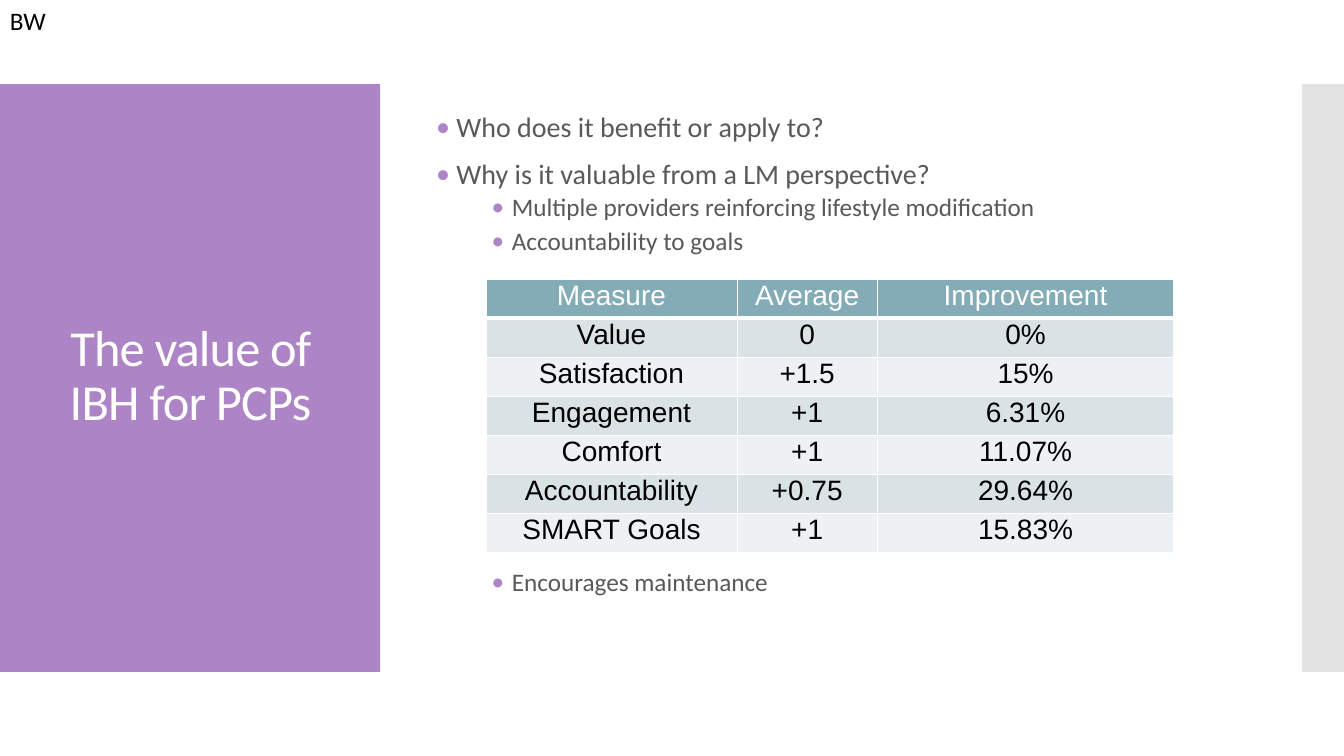
from lxml import etree
from pptx import Presentation
from pptx.dml.color import RGBColor
from pptx.enum.shapes import MSO_SHAPE
from pptx.enum.text import MSO_ANCHOR, PP_ALIGN
from pptx.oxml.ns import qn
from pptx.util import Inches, Pt

RECTANGLE = MSO_SHAPE.RECTANGLE
TOP, MIDDLE = MSO_ANCHOR.TOP, MSO_ANCHOR.MIDDLE
LEFT, CENTER = PP_ALIGN.LEFT, PP_ALIGN.CENTER

COLORS = {
    "accent": "AD84C6",
    "side": "C8C8C8",
    "white": "FFFFFF",
    "black": "000000",
    "body": "595959",
    "header": "84ACB6",
    "odd_row": "D9E3E5",
    "even_row": "EDF1F3",
}
COLUMNS, ROWS = 32, 18
MEASURES = [
    ("Measure", "Average", "Improvement"),
    ("Value", "0", "0%"),
    ("Satisfaction", "+1.5", "15%"),
    ("Engagement", "+1", "6.31%"),
    ("Comfort", "+1", "11.07%"),
    ("Accountability", "+0.75", "29.64%"),
    ("SMART Goals", "+1", "15.83%"),
]
# text, level, space before in points
POINTS = [
    ("Who does it benefit or apply to?", 0, 0),
    ("Why is it valuable from a LM perspective?", 0, 12),
    ("Multiple providers reinforcing lifestyle modification", 1, 2.5),
    ("Accountability to goals", 1, 2.5),
    ("Encourages maintenance", 1, 222),  # leaves room for the table
]


def color(name):
    return RGBColor.from_string(COLORS[name])


def add_color(parent, name):
    etree.SubElement(parent, qn("a:srgbClr"), val=COLORS[name])


class SlideBuilder:
    """Places elements on a slide by grid columns and rows."""

    def __init__(self, presentation):
        self.slide = presentation.slides.add_slide(presentation.slide_layouts[6])
        self.column = presentation.slide_width / COLUMNS
        self.row = presentation.slide_height / ROWS

    def place(self, left, top, width, height):
        return (round(left * self.column), round(top * self.row),
                round(width * self.column), round(height * self.row))

    def style(self, paragraph, size, color_name, font="Calibri", align=LEFT):
        paragraph.alignment = align
        paragraph.font.size = Pt(size)
        paragraph.font.name = font
        paragraph.font.color.rgb = color(color_name)

    def block(self, position, fill, opacity=100):
        shape = self.slide.shapes.add_shape(RECTANGLE, *self.place(*position))
        shape.shadow.inherit = False
        shape.fill.solid()
        shape.fill.fore_color.rgb = color(fill)
        shape.line.fill.background()
        if opacity < 100:
            fill_color = shape.fill._xPr.find(".//" + qn("a:srgbClr"))
            etree.SubElement(fill_color, qn("a:alpha"), val=str(opacity * 1000))

    def text_frame(self, position, anchor=TOP):
        frame = self.slide.shapes.add_textbox(*self.place(*position)).text_frame
        frame.word_wrap = True
        frame.vertical_anchor = anchor
        return frame

    def label(self, position, text, size, color_name):
        paragraph = self.text_frame(position).paragraphs[0]
        paragraph.text = text
        self.style(paragraph, size, color_name)

    def title(self, position, text):
        paragraph = self.text_frame(position, MIDDLE).paragraphs[0]
        paragraph.text = text
        paragraph.line_spacing = 0.9
        self.style(paragraph, 36, "white", align=CENTER)
        paragraph.font._rPr.set("spc", "-60")

    def bullets(self, position, points):
        frame = self.text_frame(position)
        for index, (text, level, space_before) in enumerate(points):
            paragraph = frame.add_paragraph() if index else frame.paragraphs[0]
            paragraph.text = text
            paragraph.level = level
            paragraph.line_spacing = 0.9
            paragraph.space_before = Pt(space_before)
            paragraph.space_after = Pt(2.5 * level)
            properties = paragraph._p.get_or_add_pPr()
            properties.set("marL", str(Inches((0.2, 0.75)[level])))
            properties.set("indent", str(Inches(-0.2)))
            add_color(etree.SubElement(properties, qn("a:buClr")), "accent")
            etree.SubElement(properties, qn("a:buFont"), typeface="Calibri")
            etree.SubElement(properties, qn("a:buChar"), char="•")
            self.style(paragraph, 20 - 2 * level, "body")

    def border(self, cell, edge, width):
        line = etree.SubElement(cell._tc.get_or_add_tcPr(), qn("a:ln" + edge),
                                w=str(Pt(width)))
        add_color(etree.SubElement(line, qn("a:solidFill")), "white")

    def cell(self, cell, text, row_index):
        is_header = row_index == 0
        cell.margin_left = cell.margin_right = Inches(0.02)
        cell.margin_top = cell.margin_bottom = Inches(0.01)
        for edge in "LRTB":
            # the thick header rule also forms the top of the first data row
            thick = (row_index, edge) in ((0, "B"), (1, "T"))
            self.border(cell, edge, 3 if thick else 1)
        fill = "header" if is_header else ("even_row", "odd_row")[row_index % 2]
        cell.fill.solid()
        cell.fill.fore_color.rgb = color(fill)
        paragraph = cell.text_frame.paragraphs[0]
        paragraph.text = text
        self.style(paragraph, 20, "white" if is_header else "black", "Arial", CENTER)

    def table(self, left, top, widths, row_height, rows):
        position = self.place(left, top, sum(widths), row_height * len(rows))
        table = self.slide.shapes.add_table(len(rows), len(widths), *position).table
        table.horz_banding = False
        for column, width in zip(table.columns, widths):
            column.width = round(width * self.column)
        for row_index, values in enumerate(rows):
            table.rows[row_index].height = round(row_height * self.row)
            for column_index, text in enumerate(values):
                self.cell(table.cell(row_index, column_index), text, row_index)


def main():
    presentation = Presentation()
    presentation.slide_width = Inches(13.33)
    presentation.slide_height = Inches(7.5)
    builder = SlideBuilder(presentation)
    builder.block((0, 2, 9.05, 14), "accent")
    builder.block((31, 2, 1, 14), "side", opacity=50)
    builder.title((0.67, 2.95, 7.73, 12.07), "The value of IBH for PCPs")
    builder.bullets((10.15, 2.59, 19.2, 13.44), POINTS)
    builder.table(11.57, 6.65, (5.98, 3.34, 7.06), 0.93, MEASURES)
    builder.label((0, 0, 1.73, 0.96), "BW", 18, "black")
    presentation.save("out.pptx")


if __name__ == "__main__":
    main()
